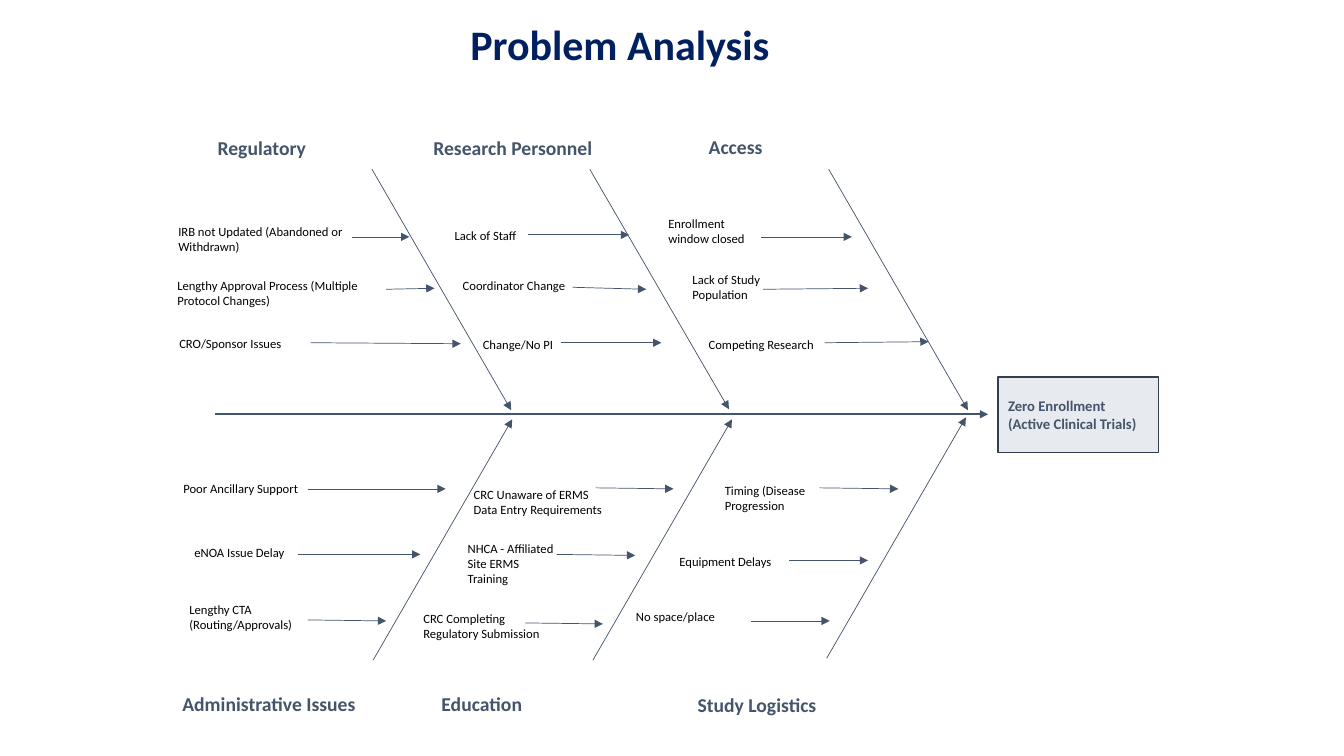
from dataclasses import dataclass

from lxml.etree import SubElement
from pptx import Presentation
from pptx.dml.color import RGBColor
from pptx.enum.shapes import MSO_CONNECTOR, MSO_SHAPE
from pptx.enum.text import MSO_ANCHOR, PP_ALIGN
from pptx.oxml.ns import qn
from pptx.util import Inches, Pt


@dataclass(frozen=True)
class Theme:
    font: str = "Calibri"
    title: str = "002060"
    slate: str = "44546A"
    cause: str = "000000"
    effect_fill: str = "D6DCE5"
    effect_line: str = "333F50"
    title_size: float = 30
    category_size: float = 14
    effect_size: float = 10.5
    cause_size: float = 9
    spine_width: float = 1.5
    bone_width: float = 0.5


theme = Theme()

presentation = Presentation()
presentation.slide_width = Inches(13.33)
presentation.slide_height = Inches(7.5)
slide = presentation.slides.add_slide(presentation.slide_layouts[5])


def write_text(shape, lines, size, color, bold=False, align=PP_ALIGN.LEFT, anchor=MSO_ANCHOR.MIDDLE):
    frame = shape.text_frame
    frame.word_wrap = True
    frame.vertical_anchor = anchor
    frame.margin_left = frame.margin_right = Inches(0.1)
    frame.margin_top = frame.margin_bottom = Inches(0.05)
    for index, line in enumerate(lines):
        paragraph = frame.add_paragraph() if index else frame.paragraphs[0]
        paragraph.alignment = align
        run = paragraph.add_run()
        run.text = line
        run.font.name = theme.font
        run.font.size = Pt(size)
        run.font.bold = bold
        run.font.color.rgb = RGBColor.from_string(color)


def add_arrow(start_x, start_y, end_x, end_y, width=theme.bone_width):
    arrow = slide.shapes.add_connector(
        MSO_CONNECTOR.STRAIGHT, Inches(start_x), Inches(start_y), Inches(end_x), Inches(end_y))
    arrow.line.color.rgb = RGBColor.from_string(theme.slate)
    arrow.line.width = Pt(width)
    SubElement(arrow.line._get_or_add_ln(), qn("a:tailEnd"), type="triangle")
    SubElement(arrow._element.spPr, qn("a:effectLst"))


title = slide.shapes.title
title.left, title.top, title.width, title.height = Inches(2.06), Inches(0.13), Inches(8.18), Inches(0.61)
write_text(title, ["Problem Analysis"], theme.title_size, theme.title, True, PP_ALIGN.CENTER, MSO_ANCHOR.TOP)

effect = slide.shapes.add_shape(MSO_SHAPE.RECTANGLE, Inches(9.9), Inches(3.74), Inches(1.59), Inches(0.75))
effect.shadow.inherit = False
effect.fill.solid()
effect.fill.fore_color.rgb = RGBColor.from_string(theme.effect_fill)
SubElement(effect.fill._xPr.find(qn("a:solidFill"))[0], qn("a:alpha"), val="58000")
effect.line.color.rgb = RGBColor.from_string(theme.effect_line)
effect.line.width = Pt(1)
write_text(effect, ["Zero Enrollment", "(Active Clinical Trials)"], theme.effect_size, theme.slate, True)

add_arrow(2.13, 4.11, 9.8, 4.11, theme.spine_width)

# category, (left, top, width), bone, [(cause, (left, top, width, height), arrow)]
branches = [
    ("Regulatory", (2.06, 1.3, 1.63), (3.69, 1.68, 5.07, 4.07), [
        ("IRB not Updated (Abandoned or Withdrawn)", (1.67, 2.17, 1.93, 0.4), (3.49, 2.35, 4.06, 2.35)),
        ("Lengthy Approval Process (Multiple Protocol Changes)", (1.66, 2.71, 2.25, 0.4), (3.83, 2.87, 4.31, 2.86)),
        ("CRO/Sponsor Issues", (1.68, 3.28, 1.46, 0.25), (3.08, 3.4, 4.57, 3.41)),
    ]),
    ("Research Personnel", (4.2, 1.3, 2.24), (5.85, 1.68, 7.23, 4.06), [
        ("Lack of Staff", (4.41, 2.21, 1.1, 0.25), (5.24, 2.33, 6.24, 2.33)),
        ("Coordinator Change", (4.49, 2.71, 1.38, 0.25), (5.68, 2.85, 6.41, 2.87)),
        ("Change/No PI", (4.69, 3.29, 1.04, 0.25), (5.56, 3.4, 6.56, 3.4)),
    ]),
    ("Access", (6.93, 1.29, 1.31), (8.22, 1.68, 9.6, 4.07), [
        ("Enrollment window closed", (6.53, 2.09, 1.04, 0.4), (7.55, 2.35, 8.45, 2.35)),
        ("Lack of Study Population", (6.77, 2.65, 0.96, 0.4), (7.57, 2.87, 8.61, 2.86)),
        ("Competing Research", (6.93, 3.29, 1.39, 0.25), (8.18, 3.4, 9.21, 3.39)),
    ]),
    ("Administrative Issues", (1.71, 6.82, 2.21), (3.7, 6.55, 5.08, 4.16), [
        ("Poor Ancillary Support", (1.72, 4.72, 1.56, 0.25), (3.05, 4.85, 4.42, 4.85)),
        ("eNOA Issue Delay", (1.83, 5.36, 1.26, 0.25), (2.96, 5.5, 4.17, 5.5)),
        ("Lengthy CTA (Routing/Approvals)", (1.78, 5.92, 1.34, 0.4), (3.05, 6.15, 3.83, 6.16)),
    ]),
    ("Education", (4.28, 6.82, 2.21), (5.88, 6.55, 7.26, 4.16), [
        ("CRC Unaware of ERMS Data Entry Requirements", (4.6, 4.78, 1.49, 0.4), (5.91, 4.84, 6.68, 4.85)),
        ("NHCA - Affiliated Site ERMS Training", (4.54, 5.31, 1.1, 0.56), (5.52, 5.5, 6.3, 5.51)),
        ("CRC Completing Regulatory Submission", (4.1, 6.01, 1.42, 0.4), (5.21, 6.18, 5.98, 6.19)),
    ]),
    ("Study Logistics", (6.82, 6.83, 2.21), (8.2, 6.53, 9.58, 4.14), [
        ("Timing (Disease Progression", (7.09, 4.74, 1.1, 0.4), (8.13, 4.84, 8.91, 4.85)),
        ("Equipment Delays", (6.64, 5.44, 1.29, 0.25), (7.83, 5.56, 8.61, 5.56)),
        ("No space/place", (6.21, 5.99, 1.1, 0.25), (7.45, 6.16, 8.23, 6.16)),
    ]),
]

for category, (left, top, width), bone, causes in branches:
    heading = slide.shapes.add_textbox(Inches(left), Inches(top), Inches(width), Inches(0.33))
    write_text(heading, [category], theme.category_size, theme.slate, True, anchor=MSO_ANCHOR.TOP)
    add_arrow(*bone)
    for cause, box, arrow in causes:
        label = slide.shapes.add_textbox(*map(Inches, box))
        write_text(label, [cause], theme.cause_size, theme.cause)
        add_arrow(*arrow)

presentation.save("out.pptx")
